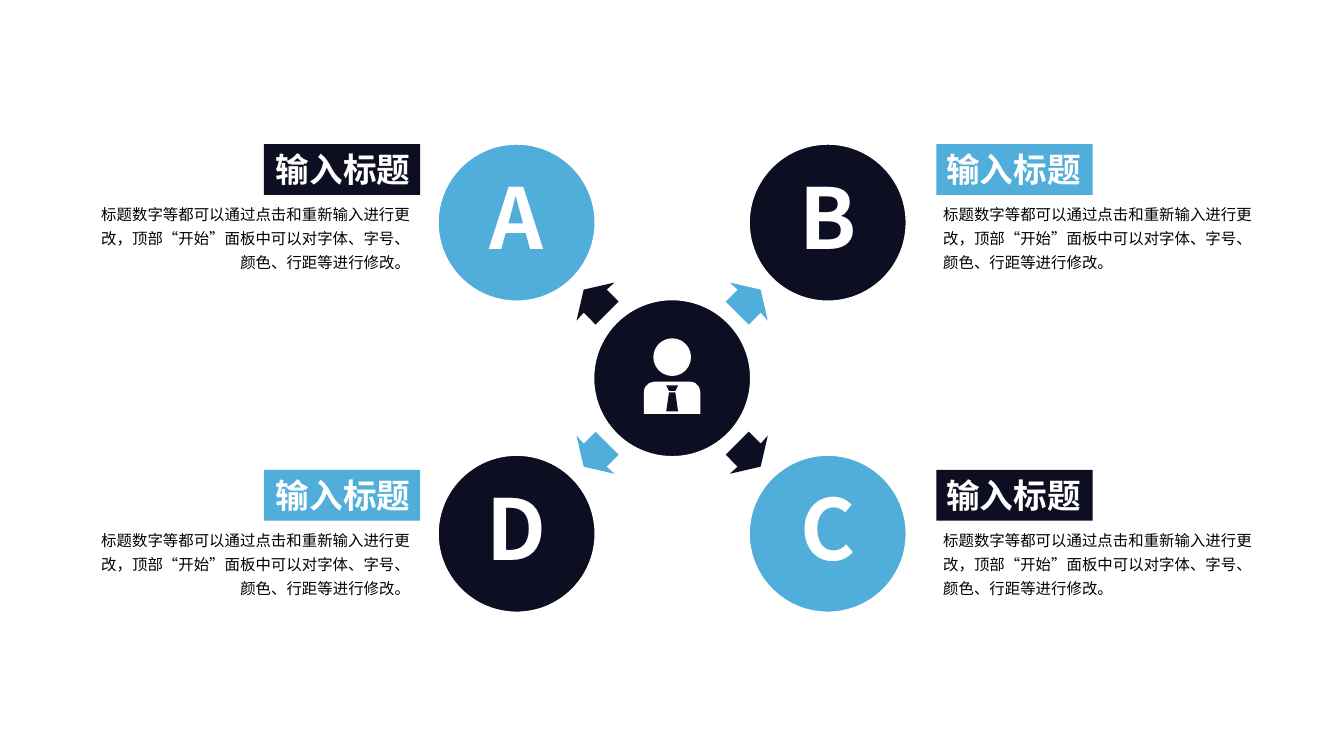
from pptx import Presentation
from pptx.dml.color import RGBColor
from pptx.enum.shapes import MSO_SHAPE as Shape
from pptx.enum.text import MSO_ANCHOR as Anchor, PP_ALIGN as Align
from pptx.util import Cm, Pt

COLOURS = {"navy": "0E0E23", "blue": "51ADD9", "white": "FFFFFF", "black": "000000"}
FONT = "Noto Sans CJK SC"
CENTRE_X, CENTRE_Y = 16.94, 9.53
DIAMETER = 3.96
STEP = 3.92  # distance from the hub to each circle, across and down

HEADING = "输入标题"
BODY = "标题数字等都可以通过点击和重新输入进行更改，顶部“开始”面板中可以对字体、字号、颜色、行距等进行修改。"

# Outlines are measured from the centre of the hub.
ARROW = [(1.35, 1.93), (1.65, 2.23), (1.45, 2.41), (2.23, 2.23),
         (2.41, 1.45), (2.23, 1.65), (1.93, 1.35)]
TIE_KNOT = [(-0.15, 0.18), (0.15, 0.18), (0.08, 0.32), (-0.08, 0.32)]
TIE_BLADE = [(-0.08, 0.36), (0.08, 0.36), (0.15, 0.84), (-0.15, 0.84)]

# Letter, side across, side down, circle colour, accent colour
BRANCHES = [
    ("A", -1, -1, "blue", "navy"),
    ("B", 1, -1, "navy", "blue"),
    ("C", 1, 1, "blue", "navy"),
    ("D", -1, 1, "navy", "blue"),
]


def rgb(name):
    return RGBColor.from_string(COLOURS[name])


class HubSlide:
    def __init__(self, slide):
        self.slide = slide
        self.shapes = slide.shapes

    def paint(self, shape, fill, outline=None):
        shape.shadow.inherit = False
        shape.fill.solid()
        shape.fill.fore_color.rgb = rgb(fill)
        if outline:
            shape.line.color.rgb = rgb(outline)
            shape.line.width = Pt(1)
        else:
            shape.line.fill.background()
        return shape

    def preset(self, kind, left, top, width, height, fill, outline=None):
        shape = self.shapes.add_shape(kind, Cm(left), Cm(top), Cm(width), Cm(height))
        return self.paint(shape, fill, outline)

    def circle(self, x, y, diameter, fill, outline=None):
        """Draw a circle around the point x, y."""
        return self.preset(Shape.OVAL, x - diameter / 2, y - diameter / 2,
                           diameter, diameter, fill, outline)

    def polygon(self, offsets, fill, across=1, down=1):
        """Draw an outline around the hub, mirrored by the signs across and down."""
        points = [(Cm(CENTRE_X + across * x), Cm(CENTRE_Y + down * y)) for x, y in offsets]
        builder = self.shapes.build_freeform(*points[0])
        builder.add_line_segments(points[1:])
        return self.paint(builder.convert_to_shape(), fill)

    def set_text(self, shape, text, size, colour="white", bold=False, align=Align.LEFT,
                 anchor=Anchor.MIDDLE, wrap=True, spacing=1.0, after=0):
        frame = shape.text_frame
        frame.word_wrap = wrap
        frame.vertical_anchor = anchor
        paragraph = frame.paragraphs[0]
        paragraph.alignment = align
        paragraph.line_spacing = spacing
        paragraph.space_after = Pt(after)
        run = paragraph.add_run()
        run.text = text
        run.font.size = Pt(size)
        run.font.bold = bold
        run.font.name = FONT
        run.font.color.rgb = rgb(colour)
        # East Asian text takes its typeface from a separate element.
        properties = run.font._element
        latin = properties.find("{*}latin")
        east_asian = latin.makeelement(latin.tag.replace("latin", "ea"), {"typeface": FONT})
        latin.addnext(east_asian)

    def person(self):
        self.shapes = self.slide.shapes.add_group_shape().shapes
        self.circle(CENTRE_X, CENTRE_Y - 0.53, 0.95, "white")
        torso = self.preset(Shape.ROUND_2_SAME_RECTANGLE, CENTRE_X - 0.71, CENTRE_Y + 0.09,
                            1.42, 0.81, "white")
        torso.adjustments[0] = 0.31
        for outline in (TIE_KNOT, TIE_BLADE):
            self.polygon(outline, "navy")
        self.shapes = self.slide.shapes

    def branch(self, letter, across, down, circle_colour, accent):
        self.polygon(ARROW, accent, across, down)
        circle = self.circle(CENTRE_X + across * STEP, CENTRE_Y + down * STEP,
                             DIAMETER, circle_colour, "white")
        frame = circle.text_frame
        frame.margin_left = frame.margin_right = frame.margin_top = frame.margin_bottom = 0
        self.set_text(circle, letter, 60, bold=True, align=Align.CENTER, spacing=0.9, after=6)

        on_left = across < 0
        align = Align.RIGHT if on_left else Align.LEFT
        top = 3.63 if down < 0 else 11.84
        heading = self.preset(Shape.RECTANGLE, 6.65 if on_left else 23.6, top, 3.94, 1.28, accent)
        self.set_text(heading, HEADING, 24, bold=True, align=align, wrap=False)
        body = self.shapes.add_textbox(Cm(2.01 if on_left else 23.52), Cm(top + 1.27),
                                       Cm(8.58), Cm(2.08))
        self.set_text(body, BODY, 11, colour="black", align=align, anchor=Anchor.TOP, spacing=1.3)


def main():
    presentation = Presentation()
    presentation.slide_width, presentation.slide_height = Cm(33.87), Cm(19.05)
    blank_layout = presentation.slide_layouts[6]
    hub = HubSlide(presentation.slides.add_slide(blank_layout))
    hub.circle(CENTRE_X, CENTRE_Y, DIAMETER, "navy", "white")
    for branch in BRANCHES:
        hub.branch(*branch)
    hub.person()
    presentation.save("out.pptx")


if __name__ == "__main__":
    main()
